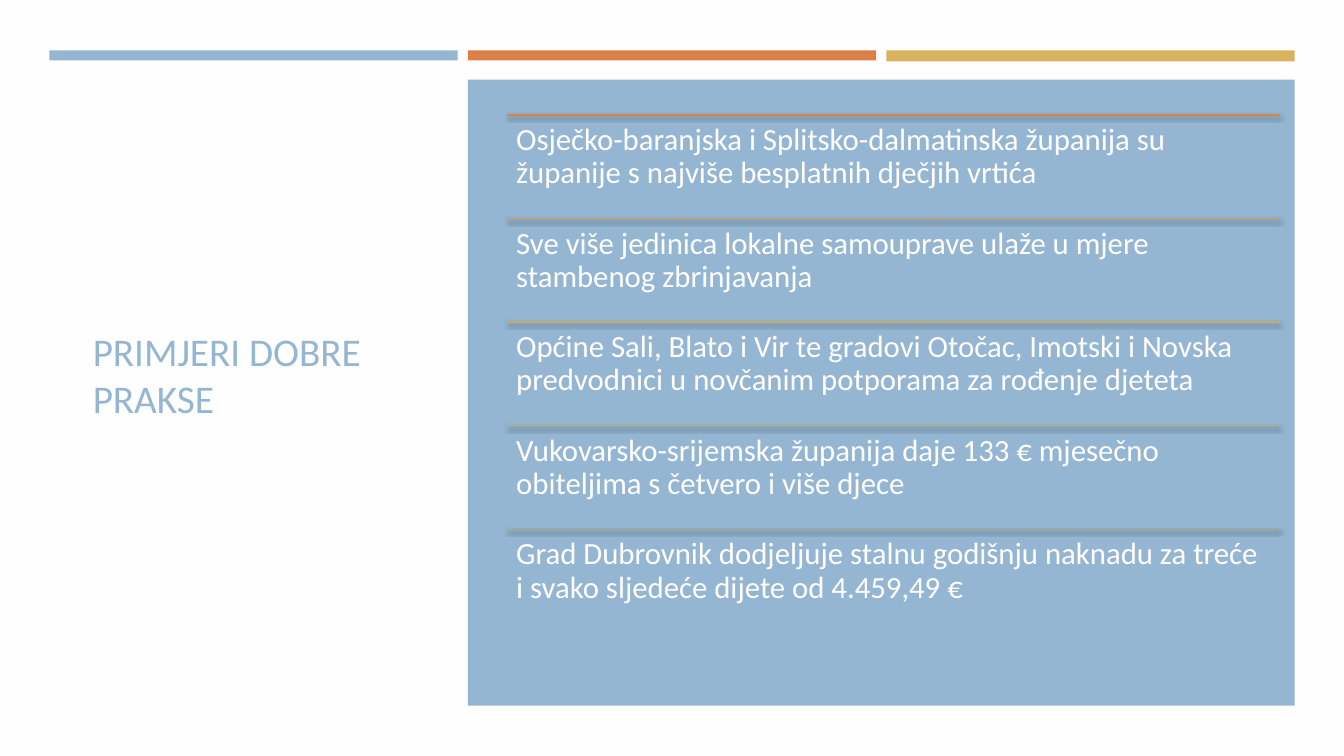
"""Build the slide on examples of good practice."""
from lxml import etree
from pptx import Presentation
from pptx.dml.color import RGBColor
from pptx.enum.shapes import MSO_CONNECTOR, MSO_SHAPE
from pptx.enum.text import MSO_ANCHOR, MSO_AUTO_SIZE, PP_ALIGN
from pptx.oxml import parse_xml
from pptx.oxml.ns import nsdecls
from pptx.util import Inches, Pt

BLUE = RGBColor(0x94, 0xB6, 0xD2)
ORANGE = RGBColor(0xDD, 0x80, 0x47)
GOLD = RGBColor(0xD8, 0xB2, 0x5C)
WHITE = RGBColor(0xFF, 0xFF, 0xFF)
BACKDROP = RGBColor(0xFF, 0xFE, 0xFF)
FONT = "Calibri"

TITLE = "PRIMJERI DOBRE PRAKSE"
ITEMS = [
    ("Osječko-baranjska i Splitsko-dalmatinska županija su županije s najviše besplatnih dječjih vrtića",
     ORANGE),
    ("Sve više jedinica lokalne samouprave ulaže u mjere stambenog zbrinjavanja",
     RGBColor(0xD0, 0x9C, 0x56)),
    ("Općine Sali, Blato i Vir te gradovi Otočac, Imotski i Novska predvodnici u novčanim potporama "
     "za rođenje djeteta", RGBColor(0xC4, 0xAD, 0x64)),
    ("Vukovarsko-srijemska županija daje 133 € mjesečno obiteljima s četvero i više djece",
     RGBColor(0xB7, 0xB4, 0x73)),
    ("Grad Dubrovnik dodjeljuje stalnu godišnju naknadu za treće i svako sljedeće dijete od 4.459,49 €",
     RGBColor(0xA5, 0xAB, 0x81)),
]
BARS = [(BLUE, 0.1), (ORANGE, 0.1), (GOLD, 0.11)]
BAR_LEFT, BAR_TOP, BAR_WIDTH, BAR_STEP = 0.49, 0.5, 4.05, 4.15
LIST_LEFT, LIST_TOP, LIST_WIDTH = 5.03, 1.14, 7.67
ROW_HEIGHT = (5.25 - LIST_TOP) / (len(ITEMS) - 1)


def add_block(slide, left, top, width, height, color):
    """Add a plain filled rectangle."""
    block = slide.shapes.add_shape(
        MSO_SHAPE.RECTANGLE, Inches(left), Inches(top), Inches(width), Inches(height))
    block.shadow.inherit = False
    block.fill.solid()
    block.fill.fore_color.rgb = color
    block.line.fill.background()
    return block


def format_text(paragraph, size, color):
    """Format the runs of a paragraph."""
    paragraph.alignment = PP_ALIGN.LEFT
    for run in paragraph.runs:
        run.font.name = FONT
        run.font.size = Pt(size)
        run.font.color.rgb = color


def add_title(slide):
    """Fill and place the title placeholder."""
    title = slide.shapes.title
    title.left, title.top = Inches(0.82), Inches(1.14)
    title.width, title.height = Inches(3.34), Inches(5.15)
    frame = title.text_frame
    frame.text = TITLE
    frame.word_wrap = True
    frame.auto_size = MSO_AUTO_SIZE.NONE
    frame.vertical_anchor = MSO_ANCHOR.MIDDLE
    format_text(frame.paragraphs[0], 28, BLUE)
    return title


def add_rule(slide, top, color):
    """Add a coloured divider with a soft shadow below it."""
    rule = slide.shapes.add_connector(
        MSO_CONNECTOR.STRAIGHT, Inches(LIST_LEFT), Inches(top),
        Inches(LIST_LEFT + LIST_WIDTH), Inches(top))
    rule.line.color.rgb = color
    rule.line.width = Pt(1)
    effects = parse_xml(f"<a:effectLst {nsdecls('a')}/>")
    shadow = etree.SubElement(
        effects, effects.tag.replace("effectLst", "outerShdw"),
        blurRad=str(Pt(3)), dist=str(Pt(2)), dir="5400000", rotWithShape="0")
    color_tag = etree.SubElement(shadow, effects.tag.replace("effectLst", "srgbClr"), val="000000")
    etree.SubElement(color_tag, effects.tag.replace("effectLst", "alpha"), val="55000")
    rule.element.spPr.append(effects)


def add_item(slide, top, text):
    """Add the text of one list row."""
    box = slide.shapes.add_textbox(
        Inches(LIST_LEFT), Inches(top), Inches(LIST_WIDTH), Inches(ROW_HEIGHT))
    frame = box.text_frame
    frame.word_wrap = True
    frame.margin_left = frame.margin_right = Inches(0.09)
    frame.margin_top = frame.margin_bottom = Inches(0.09)
    frame.text = text
    paragraph = frame.paragraphs[0]
    paragraph.line_spacing = 0.9
    format_text(paragraph, 22, WHITE)


def main():
    """Build and save the presentation."""
    presentation = Presentation()
    presentation.slide_width, presentation.slide_height = Inches(13.33), Inches(7.5)
    slide = presentation.slides.add_slide(presentation.slide_layouts[5])

    title = add_title(slide)
    backdrop = add_block(slide, 0, 0, 13.33, 7.5, BACKDROP)
    title.element.addprevious(backdrop.element)

    for index, (color, height) in enumerate(BARS):
        add_block(slide, BAR_LEFT + index * BAR_STEP, BAR_TOP, BAR_WIDTH, height, color)
    add_block(slide, BAR_LEFT + BAR_STEP, 0.79, BAR_STEP + BAR_WIDTH, 6.21, BLUE)

    for index, (text, color) in enumerate(ITEMS):
        top = LIST_TOP + index * ROW_HEIGHT
        add_rule(slide, top, color)
        add_item(slide, top, text)

    presentation.save("out.pptx")


if __name__ == "__main__":
    main()
